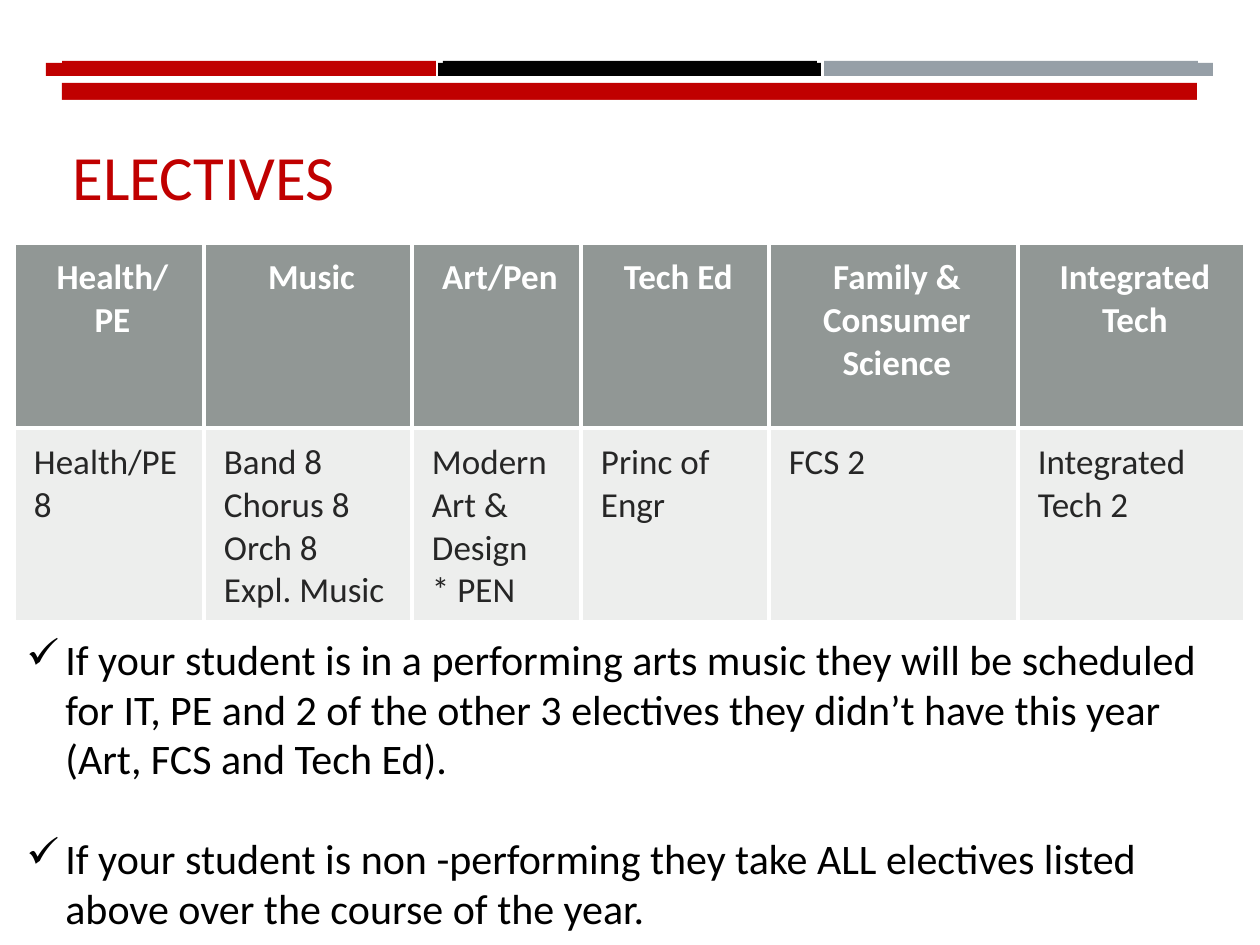
from dataclasses import dataclass

from lxml import etree
from pptx import Presentation
from pptx import util as u
from pptx.dml.color import RGBColor
from pptx.enum import shapes, text
from pptx.oxml import ns


@dataclass(frozen=True)
class Theme:
    font: str = "Calibri"
    red: str = "C00000"
    gray: str = "969FA7"
    black: str = "000000"
    white: str = "FFFFFF"
    ink: str = "262626"
    header: str = "636B68"
    body: str = "878E8B"
    title_size: int = 36
    table_size: int = 20
    note_size: int = 24
    border: int = 3


def px(value):
    return u.Emu(round(value * 914400 / 126))


def add_element(parent, tag, **attributes):
    return etree.SubElement(parent, ns.qn(tag), attributes)


class SlideBuilder:
    def __init__(self, page, theme):
        self.page = page
        self.theme = theme

    def style(self, para, size, color, bold=False):
        for span in para.runs:
            span.font.name = self.theme.font
            span.font.size = u.Pt(size)
            span.font.bold = bold
            span.font.color.rgb = RGBColor.from_string(color)

    def bar(self, left, top, width, height, color):
        shape = self.page.shapes.add_shape(
            shapes.MSO_SHAPE.RECTANGLE, px(left), px(top), px(width), px(height))
        shape.shadow.inherit = False
        shape.fill.solid()
        shape.fill.fore_color.rgb = RGBColor.from_string(color)
        shape.line.fill.background()

    def text_box(self, left, top, width, height, words):
        box = self.page.shapes.add_textbox(px(left), px(top), px(width), px(height))
        frame = box.text_frame
        frame.word_wrap = True
        frame.text = words
        return frame

    def title(self, left, top, width, height, words, bottom_inset):
        frame = self.text_box(left, top, width, height, words)
        frame.vertical_anchor = text.MSO_ANCHOR.BOTTOM
        frame.margin_bottom = px(bottom_inset)
        self.style(frame.paragraphs[0], self.theme.title_size, self.theme.red)

    def check_list(self, left, top, width, height, items, indent):
        frame = self.text_box(left, top, width, height, "\n".join(items))
        for index, para in enumerate(frame.paragraphs):
            properties = para._p.get_or_add_pPr()
            properties.set("marL", str(px(indent)))
            properties.set("indent", str(-px(indent)))
            add_element(properties, "a:buChar", char="✓")
            para.line_spacing = 0.98
            if index:
                para.space_before = u.Pt(29)
            self.style(para, self.theme.note_size, self.theme.black)

    def cell(self, cell, words, is_header):
        theme = self.theme
        cell.margin_left = px(20)
        cell.margin_right = cell.margin_top = cell.margin_bottom = px(13)
        cell.text = words
        for para in cell.text_frame.paragraphs:
            para.alignment = text.PP_ALIGN.CENTER if is_header else text.PP_ALIGN.LEFT
            self.style(para, theme.table_size,
                       theme.white if is_header else theme.ink, is_header)
        properties = cell._tc.get_or_add_tcPr()
        for side in ("a:lnL", "a:lnR", "a:lnT", "a:lnB"):
            line = add_element(properties, side, w=str(u.Pt(theme.border)))
            add_element(add_element(line, "a:solidFill"), "a:srgbClr", val=theme.white)
        cell.fill.solid()
        cell.fill.fore_color.rgb = RGBColor.from_string(
            theme.header if is_header else theme.body)
        color = properties.find(ns.qn("a:solidFill")).find(ns.qn("a:srgbClr"))
        add_element(color, "a:alpha", val="70000" if is_header else "15000")

    def table(self, left, top, columns, rows, content):
        table = self.page.shapes.add_table(
            len(rows), len(columns), px(left), px(top),
            px(sum(columns)), px(sum(rows))).table
        for column, width in zip(table.columns, columns):
            column.width = px(width)
        for index, (row, height) in enumerate(zip(table.rows, rows)):
            row.height = px(height)
            for cell, words in zip(row.cells, content[index]):
                self.cell(cell, words, index == 0)


def main():
    deck = Presentation()
    deck.slide_width, deck.slide_height = px(1260), px(945)
    theme = Theme()
    builder = SlideBuilder(deck.slides.add_slide(deck.slide_layouts[6]), theme)

    colors = (theme.red, theme.black, theme.gray)
    for index, color in enumerate(colors):
        builder.bar(62 + 381 * index, 61, 374, 15, color)
    builder.bar(62, 83, 1135, 174, theme.red)
    for index, color in enumerate(colors):
        builder.bar(46 + 392 * index, 63, 383, 13, color)
    builder.bar(0, 100, 1260, 845, theme.white)

    builder.title(60, 100, 1136, 196, "ELECTIVES", 83)
    builder.table(14, 243, (190, 208, 169, 188, 249, 227), (185, 193), (
        ("Health/\nPE", "Music", "Art/Pen", "Tech Ed",
         "Family & Consumer Science", "Integrated Tech"),
        ("Health/PE 8", "Band 8\nChorus 8\nOrch 8\nExpl. Music",
         "Modern Art & Design\n* PEN", "Princ of\nEngr", "FCS 2",
         "Integrated\nTech 2"),
    ))
    builder.check_list(14, 630, 1231, 318, (
        "If your student is in a performing arts music they will be scheduled "
        "for IT, PE and 2 of the other 3 electives they didn’t have this year "
        "(Art, FCS and Tech Ed).",
        "If your student is non -performing they take ALL electives listed "
        "above over the course of the year.",
    ), 39)
    deck.save("out.pptx")


if __name__ == "__main__":
    main()
